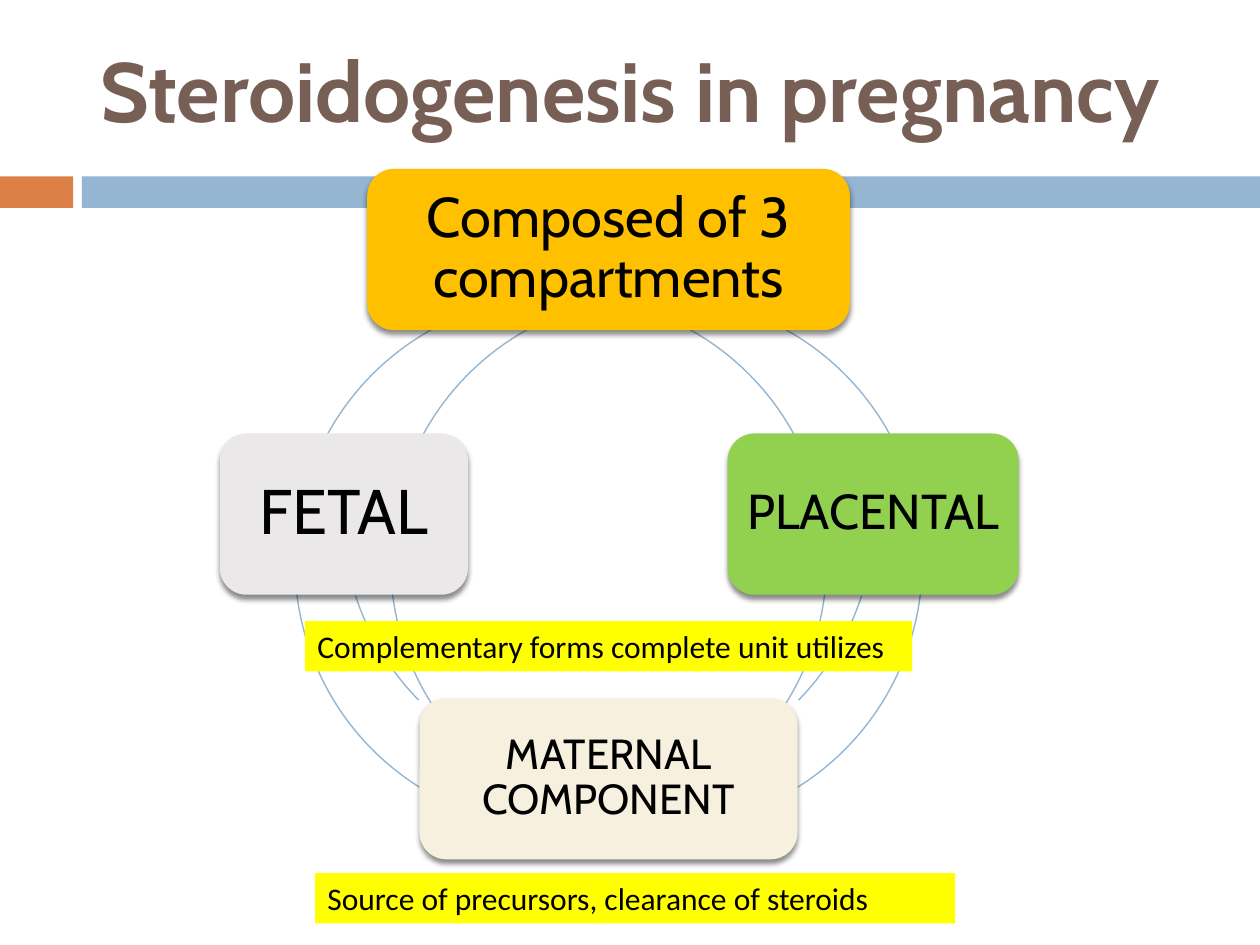
from dataclasses import dataclass

from lxml.etree import SubElement
from pptx import Presentation
from pptx.dml.color import RGBColor
from pptx.enum.shapes import MSO_SHAPE
from pptx.enum.text import MSO_ANCHOR, MSO_AUTO_SIZE, PP_ALIGN
from pptx.oxml.ns import qn
from pptx.util import Inches, Pt


@dataclass(frozen=True)
class Theme:
    """Colours, fonts and type sizes of the slide."""
    heading: str = "775F55"
    accent: str = "DD8047"
    band: str = "94B6D2"
    text: str = "000000"
    note: str = "FFFF00"
    amber: str = "FFC000"
    green: str = "92D050"
    cream: str = "F7F0DE"
    grey: str = "EAE8E8"
    display_font: str = "Cabin"
    note_font: str = "Calibri"
    title_size: int = 48
    note_size: int = 18
    arc_width: float = 0.79


class Deck:
    """Draws styled elements on the current slide."""

    def __init__(self, theme):
        self.t = theme
        self.prs = Presentation()
        self.prs.slide_width, self.prs.slide_height = Inches(10), Inches(7.5)
        self.s = self.prs.slides.add_slide(self.prs.slide_layouts[5])

    def add_text(self, tf, text, font, size, color, align, bold=False):
        """Add one formatted run to the first paragraph."""
        tf.word_wrap = True
        tf.auto_size = MSO_AUTO_SIZE.NONE
        tf.vertical_anchor = MSO_ANCHOR.MIDDLE
        p = tf.paragraphs[0]
        p.alignment = align
        r = p.add_run()
        r.text = text
        r.font.name, r.font.size, r.font.bold = font, Pt(size), bold
        r.font.color.rgb = RGBColor.from_string(color)
        return p

    def title(self, text, *box):
        """Fill and place the title placeholder."""
        sp = self.s.shapes.title
        sp.left, sp.top, sp.width, sp.height = map(Inches, box)
        self.add_text(sp.text_frame, text, self.t.display_font, self.t.title_size,
                      self.t.heading, PP_ALIGN.CENTER, True)

    def block(self, fill, *box, kind=MSO_SHAPE.RECTANGLE):
        """Add a filled shape without an outline."""
        sp = self.s.shapes.add_shape(kind, *map(Inches, box))
        sp.shadow.inherit = False
        sp.fill.solid()
        sp.fill.fore_color.rgb = RGBColor.from_string(fill)
        sp.line.fill.background()
        return sp

    def shadow(self, sp):
        """Give a shape a soft shadow below it."""
        effects = sp._element.spPr.find(qn("a:effectLst"))
        outer = SubElement(effects, qn("a:outerShdw"), blurRad=str(Pt(3)),
                           dist=str(Pt(2.4)), dir="5400000", rotWithShape="0")
        color = SubElement(outer, qn("a:srgbClr"), val=self.t.text)
        SubElement(color, qn("a:alpha"), val="45000")

    def node(self, text, fill, size, inset, *box):
        """Add a rounded box of the cycle."""
        sp = self.block(fill, *box, kind=MSO_SHAPE.ROUNDED_RECTANGLE)
        self.shadow(sp)
        tf = sp.text_frame
        tf.margin_left = tf.margin_right = Inches(inset)
        tf.margin_top = tf.margin_bottom = Inches(inset)
        p = self.add_text(tf, text, self.t.display_font, size, self.t.text, PP_ALIGN.CENTER)
        p.line_spacing = 0.9

    def arc(self, left, top, size, start, end):
        """Add a clockwise arc between two angles in degrees."""
        sp = self.s.shapes.add_shape(MSO_SHAPE.ARC, *map(Inches, (left, top, size, size)))
        sp.shadow.inherit = False
        for i, angle in enumerate((start, end)):
            sp.adjustments[i] = (angle if angle <= 180 else angle - 360) * 0.6
        sp.fill.background()
        sp.line.color.rgb = RGBColor.from_string(self.t.band)
        sp.line.width = Pt(self.t.arc_width)

    def note(self, text, *box):
        """Add a highlighted remark."""
        sp = self.block(self.t.note, *box)
        self.add_text(sp.text_frame, text, self.t.note_font, self.t.note_size,
                      self.t.text, PP_ALIGN.LEFT)


def main():
    """Build and save the slide."""
    t = Theme()
    d = Deck(t)
    d.block(t.accent, 0, 1.4, 0.58, 0.25)
    d.block(t.band, 0.65, 1.4, 9.35, 0.25)
    d.title("Steroidogenesis in pregnancy", 0.5, 0.08, 9, 1.25)

    diameter, ring_left = 4.22, 2.72
    for shift, top, start, end in ((-0.38, 2.35, 299.2, 330.9), (0, 1.97, 17.9, 44.4)):
        d.arc(ring_left + shift, top, diameter, start, end)
        d.arc(ring_left - shift, top, diameter, (540 - end) % 360, (540 - start) % 360)

    center, top, step, height = 4.83, 1.34, 2.1, 1.28
    nodes = (
        ("Composed of 3 compartments", t.amber, 32, 0.07, 0, 0, 3.83),
        ("PLACENTAL", t.green, 28, 0.05, 2.1, 1, 2.31),
        ("MATERNAL COMPONENT", t.cream, 24, 0.04, 0, 2, 3),
        ("FETAL", t.grey, 36, 0.09, -2.1, 1, 1.97),
    )
    for text, fill, size, inset, dx, row, width in nodes:
        d.node(text, fill, size, inset,
               center + dx - width / 2, top + row * step, width, height)

    d.note("Source of precursors, clearance of steroids", 2.5, 6.93, 5.08, 0.4)
    d.note("Complementary forms complete unit utilizes", 2.42, 4.93, 4.82, 0.4)
    d.prs.save("out.pptx")


if __name__ == "__main__":
    main()
